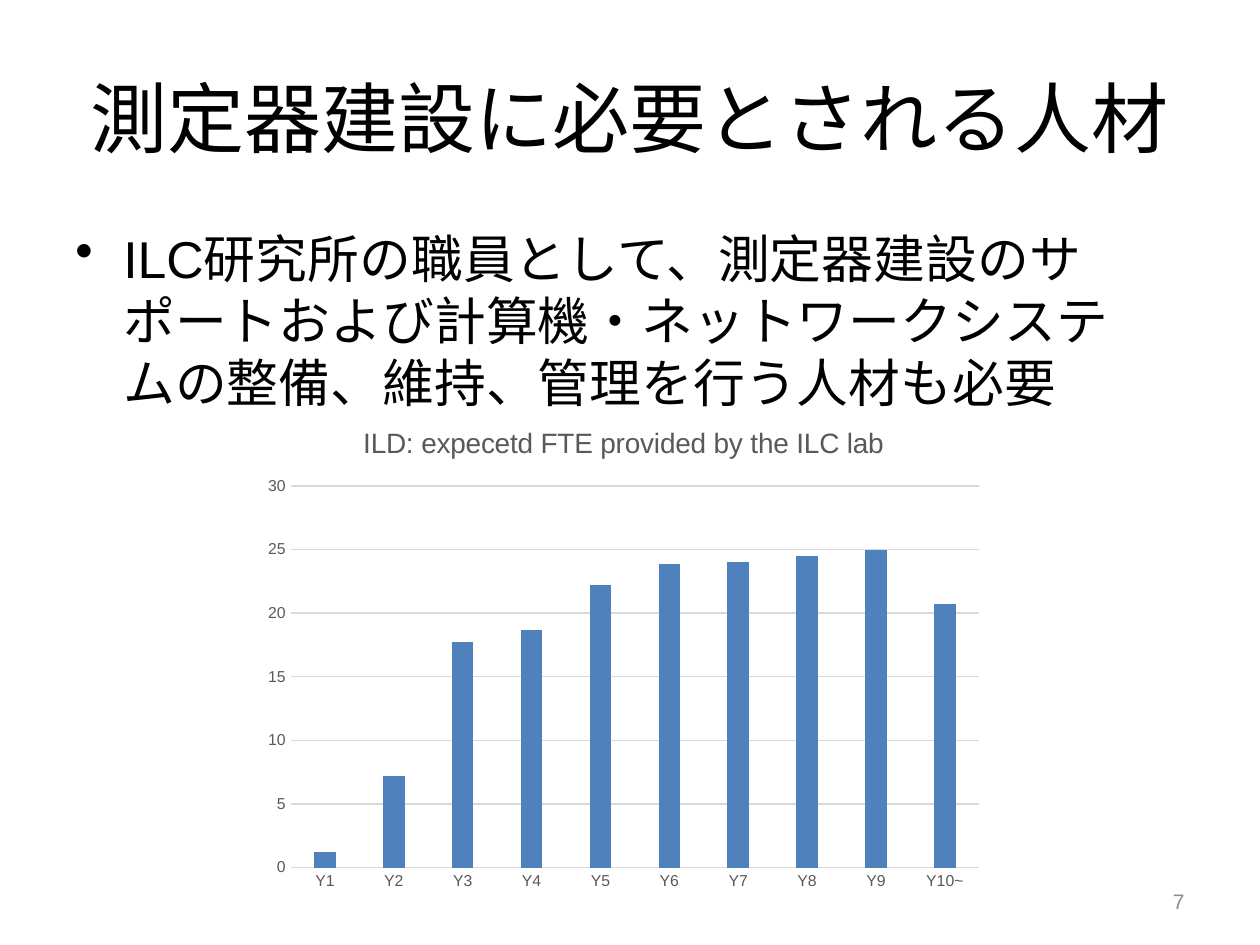
"""Build the slide on staff needed for detector construction."""
import pptx
import pptx.chart.data
import pptx.dml.color
import pptx.enum.chart
import pptx.enum.text
import pptx.oxml
import pptx.oxml.ns
import pptx.util
from pptx.util import Inches

BLACK = pptx.dml.color.RGBColor(0x00, 0x00, 0x00)
DARK_GRAY = pptx.dml.color.RGBColor(0x59, 0x59, 0x59)
MID_GRAY = pptx.dml.color.RGBColor(0x8C, 0x8C, 0x8C)
LIGHT_GRAY = pptx.dml.color.RGBColor(0xD9, 0xD9, 0xD9)
BLUE = pptx.dml.color.RGBColor(0x4F, 0x81, 0xBD)

ALIGN = pptx.enum.text.PP_ALIGN
ANCHOR = pptx.enum.text.MSO_ANCHOR

STAFF_BY_YEAR = {
    "Y1": 1.2, "Y2": 7.2, "Y3": 17.7, "Y4": 18.7, "Y5": 22.2,
    "Y6": 23.9, "Y7": 24, "Y8": 24.5, "Y9": 25, "Y10~": 20.7,
}


class SlideBuilder:
    def __init__(self, slide, font_name):
        self.slide = slide
        self.font_name = font_name

    def style_font(self, font, size, color):
        font.name = self.font_name
        font.size = pptx.util.Pt(size)
        font.color.rgb = color
        font.bold = False

    def style_line(self, line):
        line.color.rgb = LIGHT_GRAY
        line.width = pptx.util.Pt(0.75)

    def add_text(self, text, box, size, color, align=ALIGN.LEFT, anchor=ANCHOR.MIDDLE):
        shape = self.slide.shapes.add_textbox(*map(Inches, box))
        frame = shape.text_frame
        frame.word_wrap = True
        frame.vertical_anchor = anchor
        paragraph = frame.paragraphs[0]
        paragraph.text = text
        paragraph.alignment = align
        self.style_font(paragraph.font, size, color)
        return paragraph

    def add_bullet(self, text, box, size, color):
        paragraph = self.add_text(text, box, size, color, anchor=ANCHOR.TOP)
        paragraph.line_spacing = pptx.util.Pt(35.4)
        paragraph.space_before = pptx.util.Pt(3)
        properties = paragraph._p.get_or_add_pPr()
        properties.set("marL", str(Inches(0.38)))
        properties.set("indent", str(Inches(-0.38)))
        bullet = pptx.oxml.parse_xml(
            f'<a:buChar {pptx.oxml.ns.nsdecls("a")} char="•"/>')
        properties.insert_element_before(bullet, "a:tabLst", "a:defRPr", "a:extLst")

    def add_column_chart(self, title, values, box):
        chart_data = pptx.chart.data.CategoryChartData()
        chart_data.categories = list(values)
        chart_data.add_series("Series 1", list(values.values()))
        chart = self.slide.shapes.add_chart(
            pptx.enum.chart.XL_CHART_TYPE.COLUMN_CLUSTERED,
            *map(Inches, box), chart_data).chart
        self.style_font(chart.font, 10, BLACK)
        chart.has_legend = False
        chart.has_title = True
        chart.chart_title.include_in_layout = False
        paragraph = chart.chart_title.text_frame.paragraphs[0]
        paragraph.text = title
        self.style_font(paragraph.font, 16, DARK_GRAY)

        plot = chart.plots[0]
        plot.gap_width = 219
        plot.overlap = -27
        plot.vary_by_categories = False
        fill = plot.series[0].format.fill
        fill.solid()
        fill.fore_color.rgb = BLUE

        for axis in (chart.category_axis, chart.value_axis):
            axis.major_tick_mark = pptx.enum.chart.XL_TICK_MARK.NONE
            axis.minor_tick_mark = pptx.enum.chart.XL_TICK_MARK.NONE
            self.style_font(axis.tick_labels.font, 9, DARK_GRAY)
        self.style_line(chart.category_axis.format.line)
        chart.value_axis.format.line.fill.background()
        self.style_line(chart.value_axis.major_gridlines.format.line)
        chart.value_axis.minimum_scale = 0
        chart.value_axis.maximum_scale = 30
        chart.value_axis.major_unit = 5


def main():
    presentation = pptx.Presentation()
    presentation.slide_width = Inches(10)
    presentation.slide_height = Inches(7.5)
    slide = presentation.slides.add_slide(presentation.slide_layouts[6])
    builder = SlideBuilder(slide, "Arial")
    builder.add_text("測定器建設に必要とされる人材", (0.5, 0.3, 9, 1.25), 44, BLACK, ALIGN.CENTER)
    builder.add_bullet(
        "ILC研究所の職員として、測定器建設のサポートおよび計算機・ネットワークシステムの整備、維持、管理を行う人材も必要",
        (0.5, 1.75, 8.75, 1.45), 29.6, BLACK)
    builder.add_column_chart(
        "ILD: expecetd FTE provided by the ILC lab", STAFF_BY_YEAR, (2.01, 3.2, 5.88, 3.95))
    builder.add_text("7", (7.17, 6.95, 2.33, 0.4), 12, MID_GRAY, ALIGN.RIGHT)
    presentation.save("out.pptx")


if __name__ == "__main__":
    main()
